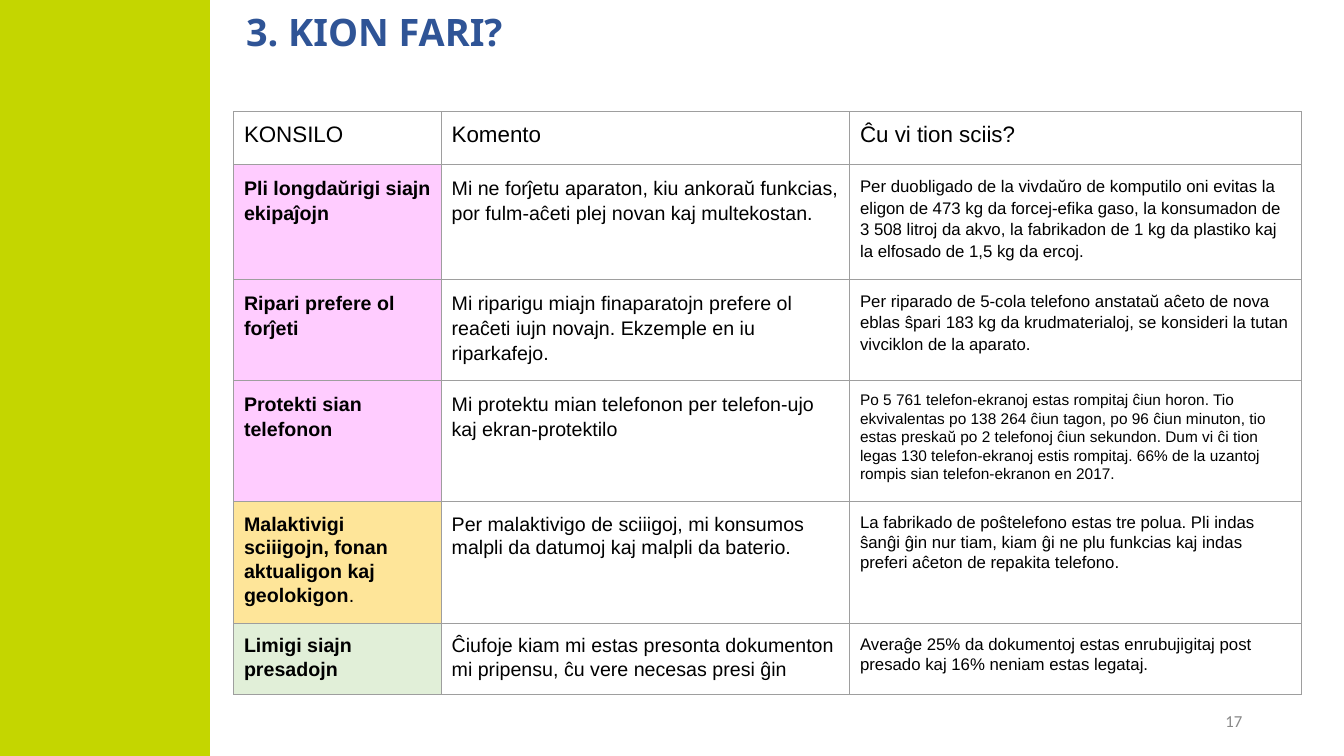
"""Build the slide that lists advice on making digital devices last longer."""
from dataclasses import dataclass

from lxml import etree
from pptx import Presentation
from pptx.dml.color import RGBColor
from pptx.enum.shapes import MSO_SHAPE
from pptx.enum.text import MSO_ANCHOR, MSO_AUTO_SIZE, PP_ALIGN
from pptx.oxml.ns import qn
from pptx.util import Inches, Pt

RECT = MSO_SHAPE.RECTANGLE
MIDDLE = MSO_ANCHOR.MIDDLE
NO_AUTOFIT = MSO_AUTO_SIZE.NONE
LEFT, RIGHT = PP_ALIGN.LEFT, PP_ALIGN.RIGHT
TITLE_ONLY = 5


@dataclass(frozen=True)
class Theme:
    band: str = "C4D600"
    title: str = "2F5496"
    text: str = "000000"
    muted: str = "888888"
    border: str = "9E9E9E"
    pink: str = "FFCCFF"
    yellow: str = "FEE599"
    green: str = "E1EFD8"
    title_font: str = "Noto Sans"
    body_font: str = "Arial"
    number_font: str = "Calibri"
    title_size: float = 27
    header_size: float = 16
    body_size: float = 14
    fact_size: float = 12
    small_size: float = 11
    number_size: float = 12
    border_width: float = 0.75


T = Theme()
HEADERS = ("KONSILO", "Komento", "Ĉu vi tion sciis?")
COL_WIDTHS = (2.06, 4.05, 4.48)
HEADER_HEIGHT = 0.52
ADVICE = [
    (1.14, T.pink, 1.15, T.fact_size, ("Pli longdaŭrigi siajn ekipaĵojn",),
     "Mi ne forĵetu aparaton, kiu ankoraŭ funkcias, por fulm-aĉeti plej novan kaj multekostan.",
     "Per duobligado de la vivdaŭro de komputilo oni evitas la eligon de 473 kg da forcej-efika "
     "gaso, la konsumadon de 3 508 litroj da akvo, la fabrikadon de 1 kg da plastiko kaj la "
     "elfosado de 1,5 kg da ercoj."),
    (0.96, T.pink, 1.15, T.fact_size, ("Ripari prefere ol forĵeti",),
     "Mi riparigu miajn finaparatojn prefere ol reaĉeti iujn novajn. Ekzemple en iu riparkafejo.",
     "Per riparado de 5-cola telefono anstataŭ aĉeto de nova eblas ŝpari 183 kg da "
     "krudmaterialoj, se konsideri la tutan vivciklon de la aparato."),
    (1.2, T.pink, 1.15, T.small_size, ("Protekti sian telefonon",),
     "Mi protektu mian telefonon per telefon-ujo kaj ekran-protektilo",
     "Po 5 761 telefon-ekranoj estas rompitaj ĉiun horon. Tio ekvivalentas po 138 264 ĉiun "
     "tagon, po 96 ĉiun minuton, tio estas preskaŭ po 2 telefonoj ĉiun sekundon. Dum vi ĉi tion "
     "legas 130 telefon-ekranoj estis rompitaj. 66% de la uzantoj rompis sian telefon-ekranon "
     "en 2017."),
    (1.13, T.yellow, 1.08, T.fact_size,
     ("Malaktivigi sciiigojn, fonan aktualigon kaj geolokigon", "."),
     "Per malaktivigo de sciiigoj, mi konsumos malpli da datumoj kaj malpli da baterio.",
     "La fabrikado de poŝtelefono estas tre polua. Pli indas ŝanĝi ĝin nur tiam, kiam ĝi ne plu "
     "funkcias kaj indas preferi aĉeton de repakita telefono."),
    (0.69, T.green, 1.08, T.fact_size, ("Limigi siajn presadojn",),
     "Ĉiufoje kiam mi estas presonta dokumenton mi pripensu, ĉu vere necesas presi ĝin",
     "Averaĝe 25% da dokumentoj estas enrubujigitaj post presado kaj 16% neniam estas legataj."),
]


class SlideBuilder:
    """Draw styled elements on one slide."""

    def __init__(self, slide, theme):
        self.s = slide
        self.t = theme

    def style(self, r, font, size, color, bold=False):
        r.font.name = font
        r.font.size = Pt(size)
        r.font.bold = bold
        r.font.color.rgb = RGBColor.from_string(color)

    def place(self, sp, x, y, w, h):
        sp.left, sp.top, sp.width, sp.height = map(Inches, (x, y, w, h))

    def band(self, x, y, w, h):
        sp = self.s.shapes.add_shape(RECT, *map(Inches, (x, y, w, h)))
        sp.shadow.inherit = False
        sp.fill.solid()
        sp.fill.fore_color.rgb = RGBColor.from_string(self.t.band)
        sp.line.color.rgb = RGBColor.from_string(self.t.band)
        sp.line.width = Pt(1)

    def title(self, text, x, y, w, h):
        sp = self.s.shapes.title
        self.place(sp, x, y, w, h)
        tf = sp.text_frame
        tf.text = text
        tf.auto_size = NO_AUTOFIT
        tf.vertical_anchor = MIDDLE
        tf.margin_left, tf.margin_right = Inches(0.39), Inches(0.59)
        p = tf.paragraphs[0]
        p.alignment = LEFT
        p.line_spacing = 0.9
        self.style(p.runs[0], self.t.title_font, self.t.title_size, self.t.title, True)

    def page_number(self, text, x, y, w, h):
        sp = self.s.shapes.add_textbox(*map(Inches, (x, y, w, h)))
        tf = sp.text_frame
        tf.text = text
        tf.word_wrap = True
        tf.vertical_anchor = MIDDLE
        p = tf.paragraphs[0]
        p.alignment = RIGHT
        self.style(p.runs[0], self.t.number_font, self.t.number_size, self.t.muted)

    def borders(self, cell):
        tc_pr = cell._tc.get_or_add_tcPr()
        for side in ("a:lnL", "a:lnR", "a:lnT", "a:lnB"):
            ln = etree.SubElement(tc_pr, qn(side), w=str(Pt(self.t.border_width)))
            fill = etree.SubElement(ln, qn("a:solidFill"))
            etree.SubElement(fill, qn("a:srgbClr"), val=self.t.border)

    def cell(self, cell, texts, size, spacing=1.0, fill=None, bold=False):
        cell.margin_left = cell.margin_right = Inches(0.1)
        cell.margin_top = cell.margin_bottom = Inches(0.1)
        self.borders(cell)
        if fill:
            cell.fill.solid()
            cell.fill.fore_color.rgb = RGBColor.from_string(fill)
        else:
            cell.fill.background()
        p = cell.text_frame.paragraphs[0]
        p.line_spacing = spacing
        for i, text in enumerate(texts):
            r = p.add_run()
            r.text = text
            self.style(r, self.t.body_font, size, self.t.text, bold and i == 0)

    def advice_table(self, x, y):
        heights = [HEADER_HEIGHT] + [row[0] for row in ADVICE]
        frame = self.s.shapes.add_table(
            len(heights), len(COL_WIDTHS), Inches(x), Inches(y),
            Inches(sum(COL_WIDTHS)), Inches(sum(heights)))
        table = frame.table
        table.first_row = table.horz_banding = False
        for col, width in zip(table.columns, COL_WIDTHS):
            col.width = Inches(width)
        for row, height in zip(table.rows, heights):
            row.height = Inches(height)
        for j, text in enumerate(HEADERS):
            self.cell(table.cell(0, j), [text], self.t.header_size)
        for i, (_, fill, spacing, fact_size, advice, comment, fact) in enumerate(ADVICE, 1):
            self.cell(table.cell(i, 0), advice, self.t.body_size, spacing, fill, True)
            self.cell(table.cell(i, 1), [comment], self.t.body_size, spacing)
            self.cell(table.cell(i, 2), [fact], fact_size, min(spacing, 1.08)
                      if fact_size == self.t.small_size else spacing)


def main():
    prs = Presentation()
    prs.slide_width, prs.slide_height = Inches(13.33), Inches(7.5)
    s = SlideBuilder(prs.slides.add_slide(prs.slide_layouts[TITLE_ONLY]), T)
    s.band(0, 0, 2.08, 7.5)
    s.page_number("17", 9.42, 6.95, 3, 0.4)
    s.title("3. KION FARI?", 2.05, 0, 11.28, 0.68)
    s.advice_table(2.32, 1.11)
    prs.save("out.pptx")


if __name__ == "__main__":
    main()
